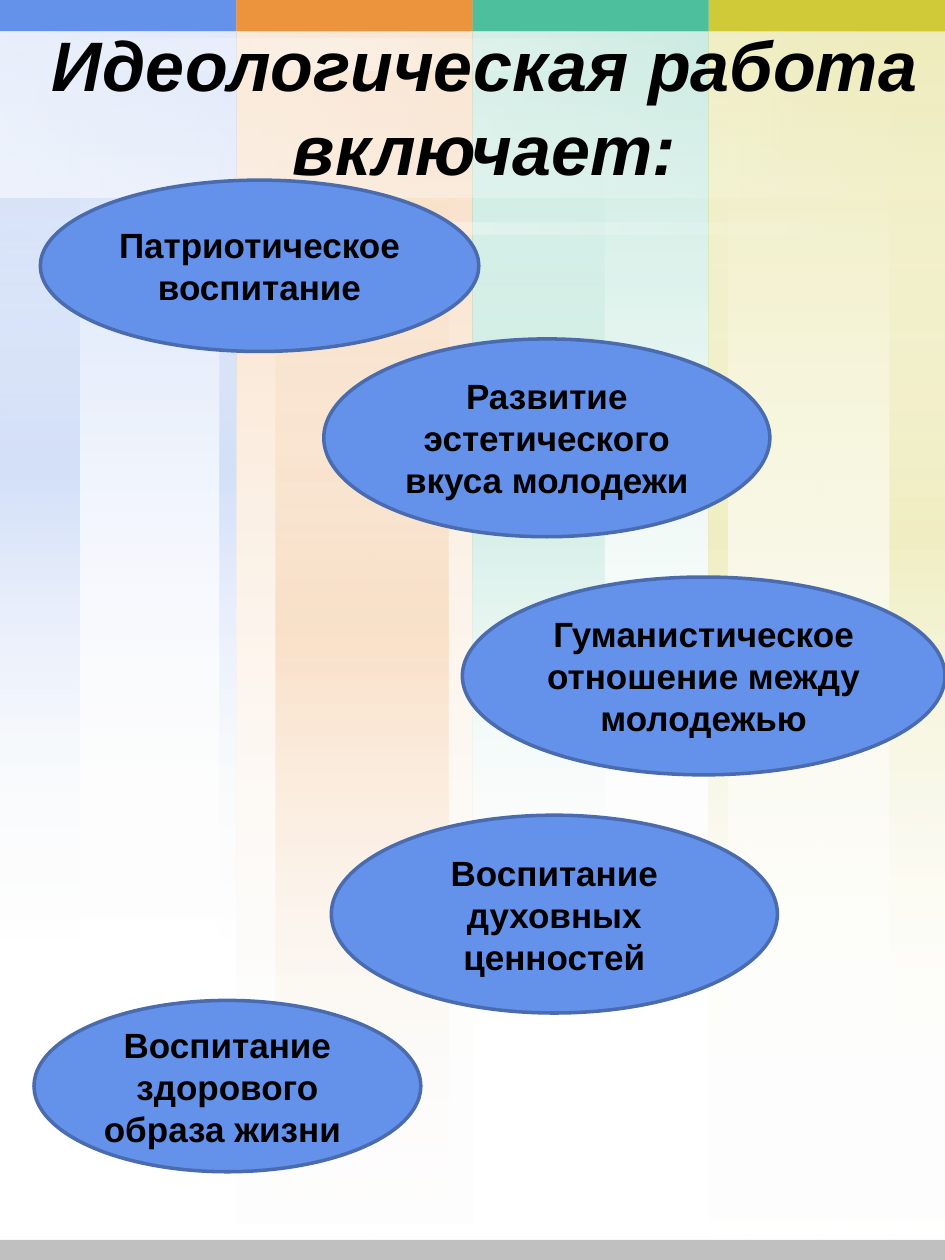
from lxml import etree
from pptx import Presentation, util as u
from pptx.dml.color import RGBColor
from pptx.enum import shapes, text
from pptx.oxml import ns

HUES = {"blue": "6491EA", "orange": "EB943D", "green": "4DBF9C", "lime": "D0C938",
        "white": "FFFFFF", "gray": "C0C0C0", "edge": "4A6BAD", "ink": "000000"}
COL = 1.875

deck = Presentation()
deck.slide_width, deck.slide_height = u.Inches(7.5), u.Inches(10)
slide = deck.slides.add_slide(deck.slide_layouts[6])


def add_form(kind, box, hue, stops=None, angle=90):
    """Add a borderless shape, with a solid fill or a fading gradient."""
    form = slide.shapes.add_shape(kind, *[u.Inches(n) for n in box])
    form.shadow.inherit = False
    form.line.fill.background()
    if not stops:
        form.fill.solid()
        form.fill.fore_color.rgb = RGBColor.from_string(HUES[hue])
        return form
    form.fill.gradient()
    form.fill.gradient_angle = -angle % 360
    grad = form.fill._xPr.find(ns.qn("a:gradFill"))
    items = grad.find(ns.qn("a:gsLst"))
    for old in list(items):
        items.remove(old)
    for spot, alpha in stops:
        stop = etree.SubElement(items, ns.qn("a:gs"), pos=str(spot * 1000))
        tone = HUES[hue] if alpha else HUES["white"]
        color = etree.SubElement(stop, ns.qn("a:srgbClr"), val=tone)
        etree.SubElement(color, ns.qn("a:alpha"), val=str(alpha * 1000))
    return form


def set_text(form, words, size, slant=False):
    """Write centred bold text in the middle of a shape."""
    frame = form.text_frame
    frame.text = words
    frame.word_wrap = True
    frame.vertical_anchor = text.MSO_ANCHOR.MIDDLE
    line = frame.paragraphs[0]
    line.alignment = text.PP_ALIGN.CENTER
    font = line.runs[0].font
    font.name, font.size, font.bold, font.italic = "Arial", u.Pt(size), True, slant
    font.color.rgb = RGBColor.from_string(HUES["ink"])


RECT = shapes.MSO_SHAPE.RECTANGLE

# Tinted columns: hue, column number, height, stripe height, stripes (left, width)
columns = [
    ("orange", 1, 10, 10, [(2.19, 1.37)]),
    ("green", 2, 7.49, 7.49, [(3.75, 1.05)]),
    ("lime", 3, 9.96, 8.5, [(5.62, 0.15), (7.06, 0.44)]),
    ("blue", 0, 7.49, 7.49, [(1.74, 0.13), (0, 0.63)]),
]
for hue, num, high, tall, stripes in columns:
    for _ in range(2):
        add_form(RECT, (num * COL, 0, COL, high), hue, [(0, 20), (100, 0)])
    for left, wide in stripes:
        add_form(RECT, (left, 0, wide, tall), hue, [(0, 0), (50, 20), (100, 0)])

# Top color bar
for num, hue in enumerate(["blue", "orange", "green", "lime"]):
    add_form(RECT, (num * COL, 0, COL, 0.25), hue)

# White bands under the bar
glow, fade = [(0, 0), (50, 35), (100, 0)], [(0, 35), (100, 0)]
bands = [((0, 1.77, 7.06, 0.09), glow), ((0, 0.25, 7.5, 1.32), fade),
         ((0, 0.31, 5.4, 0.25), glow), ((0, 0.25, 7.5, 1.32), fade)]
for box, stops in bands:
    add_form(RECT, box, "white", stops, angle=0)

# Bottom bar
add_form(RECT, (0, 9.84, 7.5, 0.16), "gray")

# Title
title = slide.shapes.add_textbox(u.Inches(0.27), 0, u.Inches(7.15), u.Inches(1.67))
set_text(title, "Идеологическая работа включает:", 40, slant=True)

# Ovals
ovals = [
    ((0.32, 1.43, 3.48, 1.36), "Патриотическое воспитание"),
    ((2.57, 2.69, 3.54, 1.57), "Развитие эстетического вкуса молодежи"),
    ((3.67, 4.58, 3.83, 1.57), "Гуманистическое отношение между молодежью"),
    ((2.63, 6.47, 3.54, 1.57), "Воспитание духовных ценностей"),
    ((0.27, 7.94, 3.07, 1.36), "Воспитание здорового образа жизни "),
]
for box, words in ovals:
    oval = add_form(shapes.MSO_SHAPE.OVAL, box, "blue")
    oval.line.color.rgb = RGBColor.from_string(HUES["edge"])
    oval.line.width = u.Pt(2)
    set_text(oval, words, 20)

deck.save("out.pptx")
